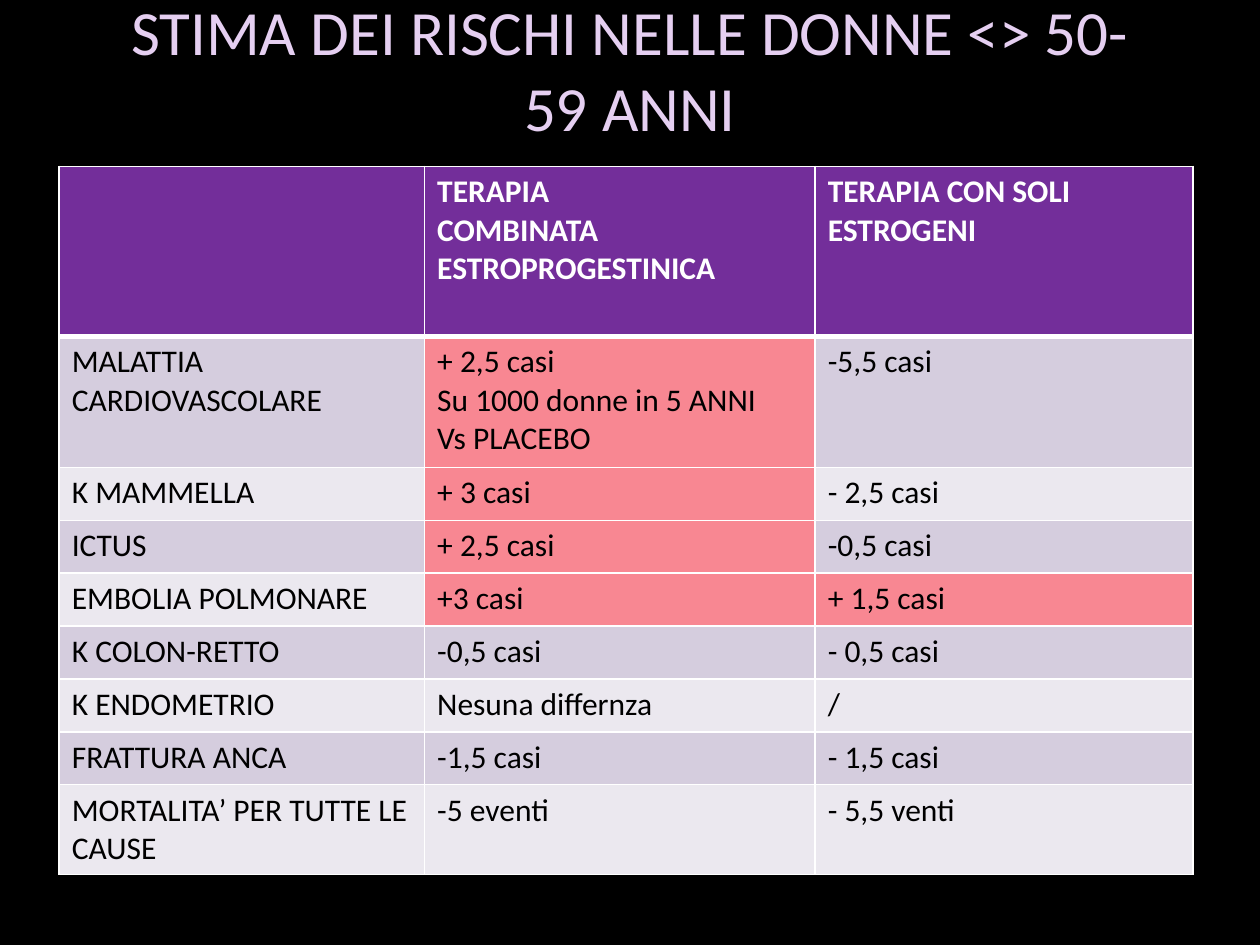
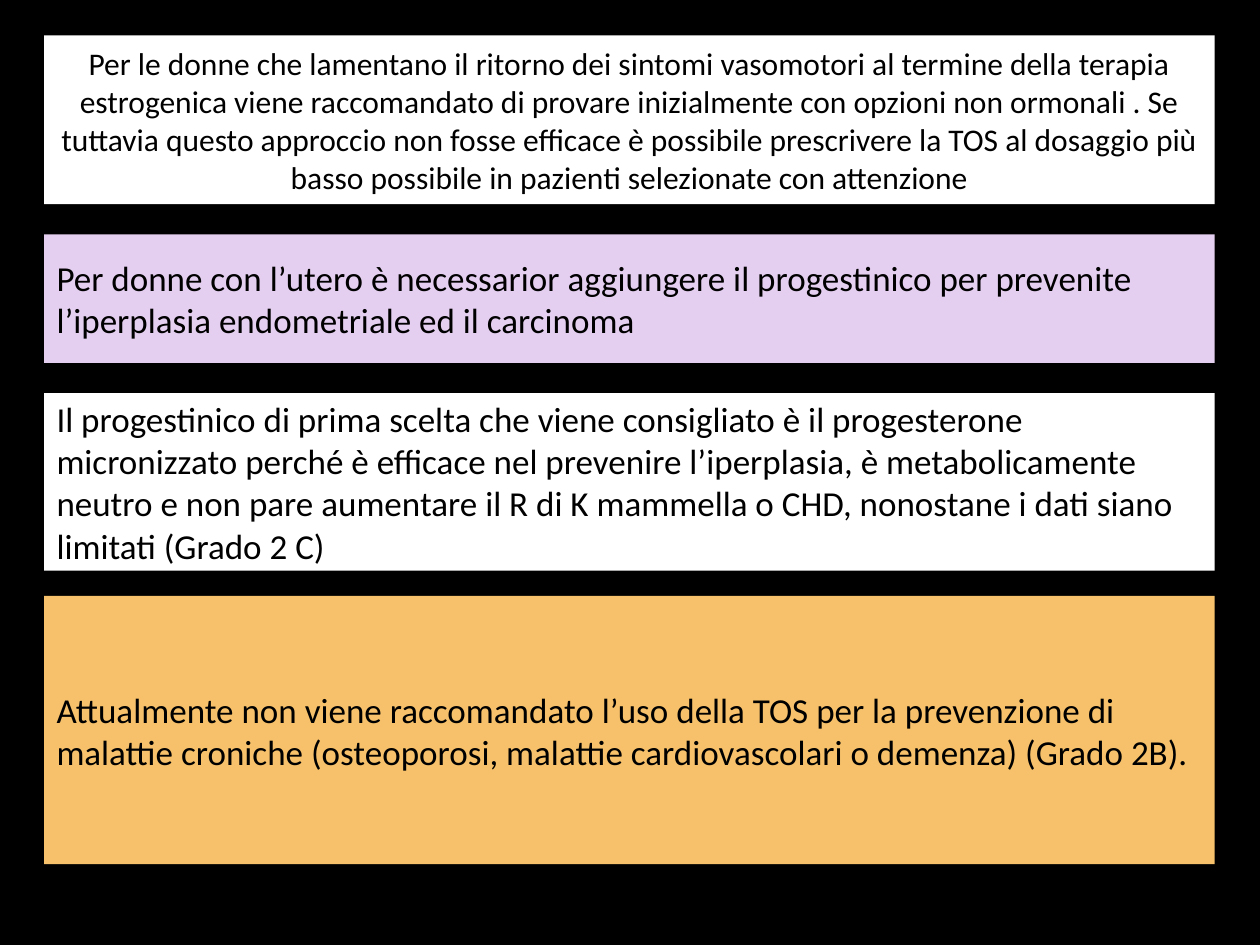
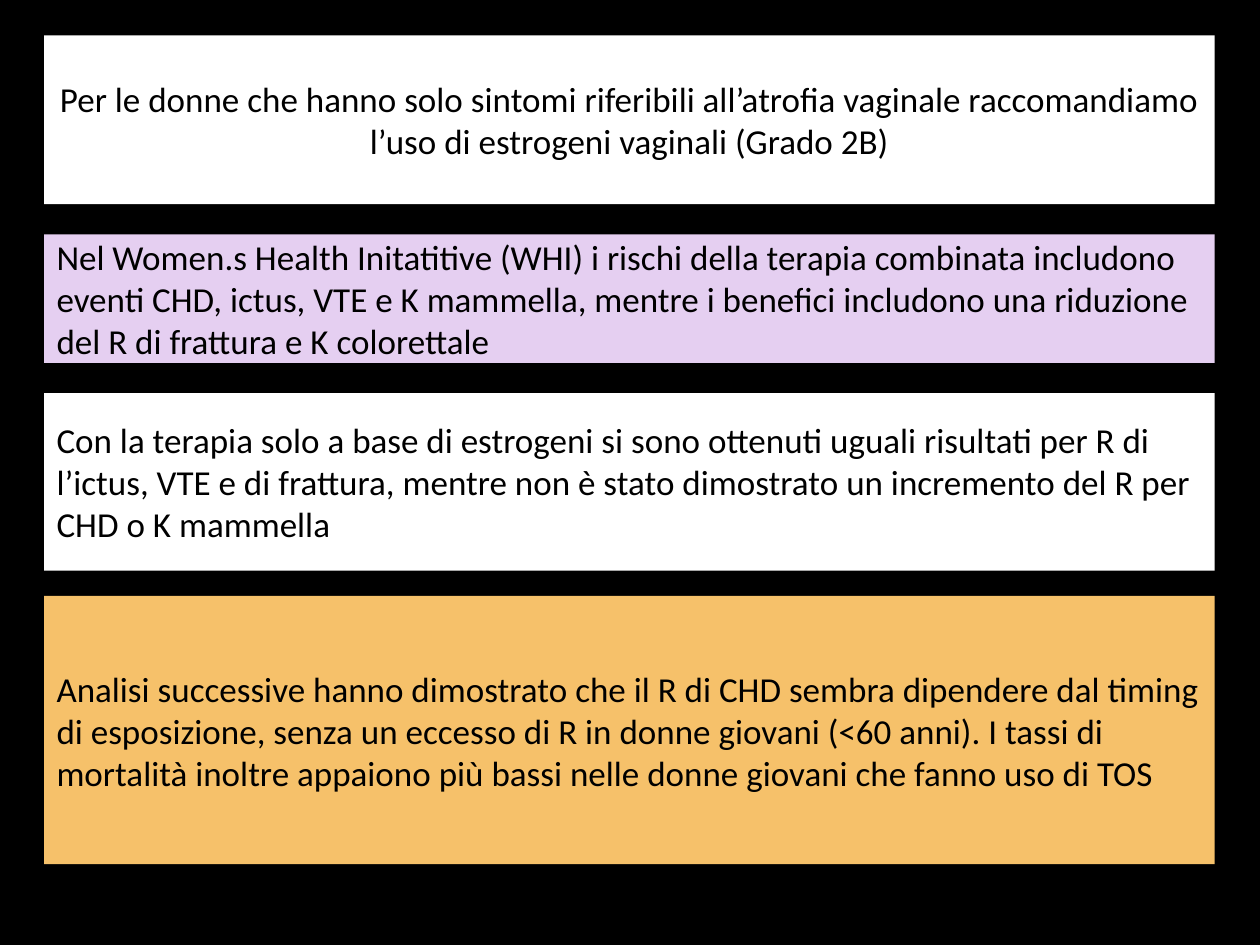
import pptx
import pptx.dml.color
import pptx.enum.shapes
import pptx.enum.text
import pptx.oxml
import pptx.oxml.ns
import pptx.util

Inches = pptx.util.Inches
Pt = pptx.util.Pt
RGBColor = pptx.dml.color.RGBColor
ALIGN = pptx.enum.text.PP_ALIGN
MIDDLE = pptx.enum.text.MSO_ANCHOR.MIDDLE

BLACK = RGBColor(0x00, 0x00, 0x00)
WHITE = RGBColor(0xFF, 0xFF, 0xFF)
LILAC = RGBColor(0xE5, 0xCF, 0xF1)
PURPLE = RGBColor(0x73, 0x2E, 0x9A)
DARK = RGBColor(0xD5, 0xCD, 0xDE)
PALE = RGBColor(0xEB, 0xE8, 0xEF)
PINK = RGBColor(0xF8, 0x87, 0x92)
ORANGE = RGBColor(0xF6, 0xC1, 0x6A)

FONT = "Calibri"
LEFT, WIDTH = 0.35, 9.29
HEAD = (LEFT, 0.28, WIDTH, 1.34)
PANELS = [(1.86, 1.02, LILAC), (3.12, 1.41, WHITE), (4.73, 2.13, ORANGE)]

COLS = [2.9, 3.1, 3]
HEIGHTS = [1.35, 1.04] + [0.42] * 6 + [0.71]
RISKS = [
    ("", "TERAPIA\nCOMBINATA\nESTROPROGESTINICA", "TERAPIA CON SOLI ESTROGENI"),
    ("MALATTIA CARDIOVASCOLARE",
     "+ 2,5 casi\nSu 1000 donne in 5 ANNI\nVs PLACEBO", "-5,5 casi"),
    ("K MAMMELLA", "+ 3 casi", "- 2,5 casi"),
    ("ICTUS", "+ 2,5 casi", "-0,5 casi"),
    ("EMBOLIA POLMONARE", "+3 casi", "+ 1,5 casi"),
    ("K COLON-RETTO", "-0,5 casi", "- 0,5 casi"),
    ("K ENDOMETRIO", "Nesuna differnza", "/"),
    ("FRATTURA ANCA", "-1,5 casi", "- 1,5 casi"),
    ("MORTALITA’ PER TUTTE LE CAUSE", "-5 eventi", "- 5,5 venti"),
]

ADVICE = [
    ("Per le donne che lamentano il ritorno dei sintomi vasomotori al termine "
     "della terapia estrogenica viene raccomandato di provare inizialmente con "
     "opzioni non ormonali . Se tuttavia questo approccio non fosse efficace è "
     "possibile prescrivere la TOS al dosaggio più basso possibile in pazienti "
     "selezionate con attenzione", 18,
     ["Per donne con l’utero è necessarior aggiungere il progestinico per "
      "prevenite l’iperplasia endometriale ed il carcinoma",
      "Il progestinico di prima scelta che viene consigliato è il progesterone "
      "micronizzato perché è efficace nel prevenire l’iperplasia, è "
      "metabolicamente neutro e non pare aumentare il R di K mammella o CHD, "
      "nonostane i dati siano limitati (Grado 2 C)",
      "Attualmente non viene raccomandato l’uso della TOS per la prevenzione di "
      "malattie croniche (osteoporosi, malattie cardiovascolari o demenza) "
      "(Grado 2B)."]),
    ("Per le donne che hanno solo sintomi riferibili all’atrofia vaginale "
     "raccomandiamo l’uso di estrogeni vaginali (Grado 2B)", 20,
     ["Nel Women.s Health Initatitive (WHI) i rischi della terapia combinata "
      "includono eventi CHD, ictus, VTE e K mammella, mentre i benefici "
      "includono una riduzione del R di frattura e K colorettale",
      "Con la terapia solo a base di estrogeni si sono ottenuti uguali "
      "risultati per R di l’ictus, VTE e di frattura, mentre non è stato "
      "dimostrato un incremento del R per CHD o K mammella",
      "Analisi successive hanno dimostrato che il R di CHD sembra dipendere dal "
      "timing di esposizione, senza un eccesso di R in donne giovani (<60 "
      "anni). I tassi di mortalità inoltre appaiono più bassi nelle donne "
      "giovani che fanno uso di TOS"]),
]


def write(frame, text, size=20, color=BLACK, bold=False, align=ALIGN.LEFT):
    """Fill a text frame, one paragraph per line of text."""
    frame.word_wrap = True
    for i, line in enumerate(text.split("\n")):
        para = frame.add_paragraph() if i else frame.paragraphs[0]
        para.alignment = align
        run = para.add_run()
        run.text = line
        font = run.font
        font.name, font.size, font.bold = FONT, Pt(size), bold
        font.color.rgb = color


def paint(item, color):
    item.fill.solid()
    item.fill.fore_color.rgb = color


def edge(cell, top, base):
    """Draw white cell borders; top and base are widths in points."""
    props = cell._tc.get_or_add_tcPr()
    for side, width in zip("LRTB", (1, 1, top, base)):
        props.append(pptx.oxml.parse_xml(
            f'<a:ln{side} {pptx.oxml.ns.nsdecls("a")} w="{Pt(width)}">'
            f'<a:solidFill><a:srgbClr val="{WHITE}"/></a:solidFill></a:ln{side}>'))


class Deck:
    def __init__(self):
        self.prs = pptx.Presentation()
        self.prs.slide_width, self.prs.slide_height = Inches(10), Inches(7.5)
        paint(self.prs.slide_master.background, BLACK)
        self.slide = None

    def start(self):
        self.slide = self.prs.slides.add_slide(self.prs.slide_layouts[5])

    def title(self, text, box, fill=None, **style):
        shape = self.slide.shapes.title
        shape.left, shape.top, shape.width, shape.height = map(Inches, box)
        if fill is not None:
            paint(shape, fill)
        frame = shape.text_frame
        frame.auto_size = pptx.enum.text.MSO_AUTO_SIZE.NONE
        frame.vertical_anchor = MIDDLE
        write(frame, text, align=ALIGN.CENTER, **style)

    def panel(self, text, top, height, fill):
        shape = self.slide.shapes.add_shape(
            pptx.enum.shapes.MSO_SHAPE.RECTANGLE,
            *map(Inches, (LEFT, top, WIDTH, height)))
        shape.shadow.inherit = False
        shape.line.fill.background()
        paint(shape, fill)
        shape.text_frame.vertical_anchor = MIDDLE
        write(shape.text_frame, text)

    def table(self, rows, left, top):
        size = left, top, sum(COLS), sum(HEIGHTS)
        grid = self.slide.shapes.add_table(
            len(rows), len(COLS), *map(Inches, size)).table
        for col, width in zip(grid.columns, COLS):
            col.width = Inches(width)
        for r, row in enumerate(rows):
            grid.rows[r].height = Inches(HEIGHTS[r])
            head = r == 0
            band = PURPLE if head else DARK if r % 2 else PALE
            for c, text in enumerate(row):
                cell = grid.cell(r, c)
                edge(cell, 3 if r == 1 else 1, 3 if head else 1)
                paint(cell, PINK if text.startswith("+") else band)
                if text:
                    write(cell.text_frame, text, size=18, bold=head,
                          color=WHITE if head else BLACK)


def main():
    deck = Deck()
    deck.start()
    deck.title("STIMA DEI RISCHI NELLE DONNE <> 50-59 ANNI",
               (0.75, -0.24, 8.5, 1.56), size=36, color=LILAC)
    deck.table(RISKS, 0.47, 1.32)
    for head, size, notes in ADVICE:
        deck.start()
        deck.title(head, HEAD, fill=WHITE, size=size)
        for text, place in zip(notes, PANELS):
            deck.panel(text, *place)
    deck.prs.save("out.pptx")


if __name__ == "__main__":
    main()
